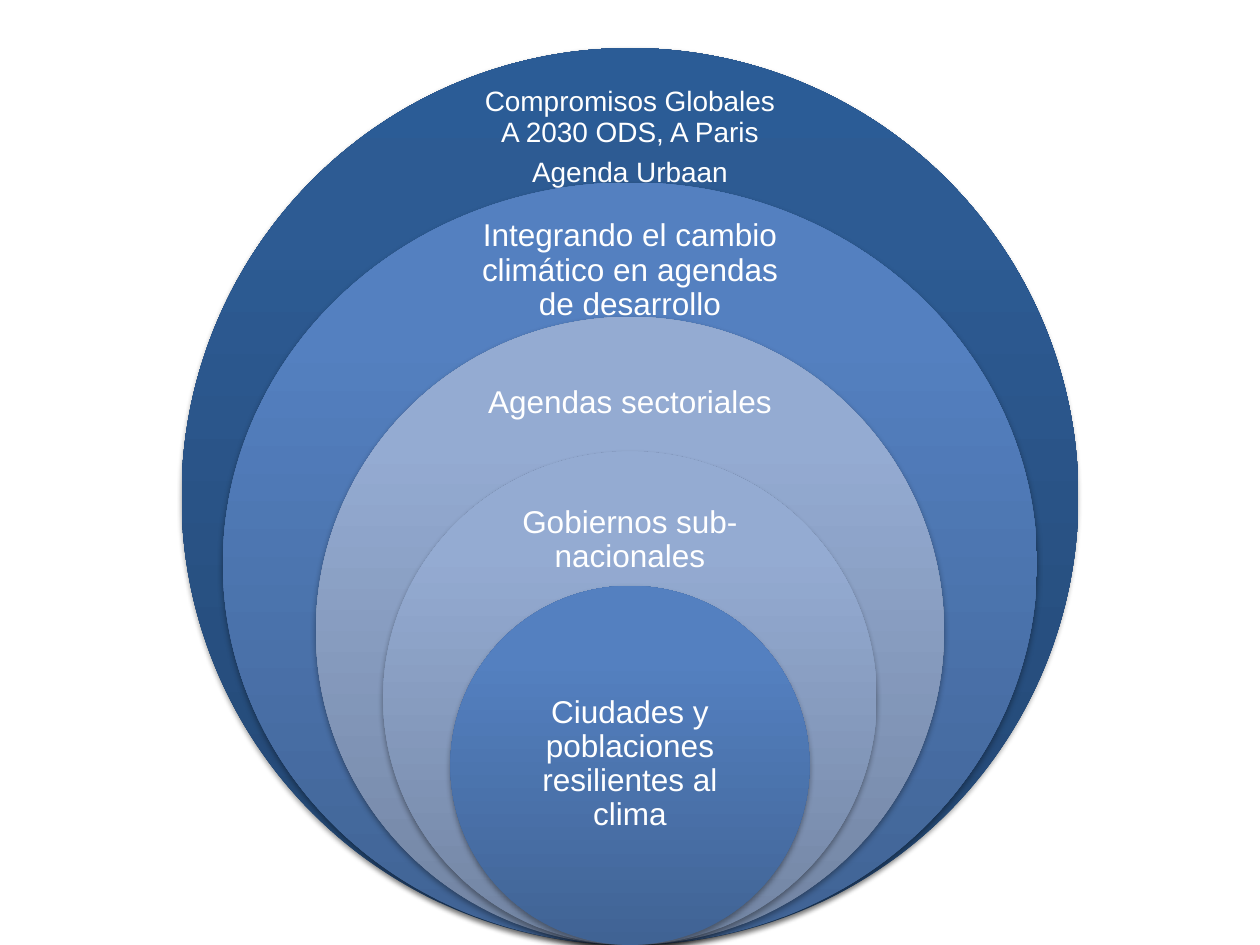
import lxml.etree
import pptx
import pptx.dml.color
import pptx.enum.shapes
import pptx.enum.text
import pptx.oxml.ns
import pptx.util

Cm = pptx.util.Cm
Pt = pptx.util.Pt
RGBColor = pptx.dml.color.RGBColor
qn = pptx.oxml.ns.qn

WHITE = RGBColor(0xFF, 0xFF, 0xFF)
BLACK = RGBColor(0x00, 0x00, 0x00)
NAVY = (RGBColor(0x23, 0x46, 0x71), RGBColor(0x2D, 0x5B, 0x93), RGBColor(0x2B, 0x5C, 0x96))
BLUE = (RGBColor(0x40, 0x63, 0x94), RGBColor(0x54, 0x80, 0xC0), RGBColor(0x52, 0x81, 0xC3))
PALE = (RGBColor(0x72, 0x84, 0xA2), RGBColor(0x94, 0xAB, 0xD2), RGBColor(0x94, 0xAC, 0xD4))

PAGE_WIDTH, PAGE_HEIGHT = 25.4, 19.05
OUTER_HEIGHT, RING_STEP = 18.08, 2.71
SECOND_RING_WIDTH = 16.41


class Diagram:
    font = "Arial"
    stops = (0, 80, 100)

    def __init__(self, page):
        self.page = page

    def add_ring(self, width, height, colours):
        ring = self.page.shapes.add_shape(
            pptx.enum.shapes.MSO_SHAPE.OVAL,
            Cm((PAGE_WIDTH - width) / 2), Cm(PAGE_HEIGHT - height), Cm(width), Cm(height))
        ring.line.fill.background()
        ring.fill.gradient()
        ring.fill.gradient_angle = 90
        stop_list = ring._element.spPr.find(qn("a:gradFill")).find(qn("a:gsLst"))
        for stop in list(stop_list):
            stop_list.remove(stop)
        for position, colour in zip(self.stops, colours):
            stop = lxml.etree.SubElement(stop_list, qn("a:gs"), pos=str(position * 1000))
            lxml.etree.SubElement(stop, qn("a:srgbClr"), val=str(colour))
        self.add_shadow(ring)

    def add_shadow(self, shape):
        shape.shadow.inherit = False
        effects = shape._element.spPr.find(qn("a:effectLst"))
        shadow = lxml.etree.SubElement(
            effects, qn("a:outerShdw"), blurRad=str(Pt(3.1)), dist=str(Pt(1.8)),
            dir="5400000", rotWithShape="0")
        colour = lxml.etree.SubElement(shadow, qn("a:srgbClr"), val=str(BLACK))
        lxml.etree.SubElement(colour, qn("a:alpha"), val="35000")

    def add_label(self, text, top, width, height, size, inset):
        box = self.page.shapes.add_textbox(
            Cm((PAGE_WIDTH - width) / 2), Cm(top), Cm(width), Cm(height))
        frame = box.text_frame
        frame.word_wrap = True
        frame.vertical_anchor = pptx.enum.text.MSO_ANCHOR.MIDDLE
        frame.margin_left = frame.margin_right = Cm(inset)
        frame.margin_top = frame.margin_bottom = Cm(inset)
        frame.text = text
        for para in frame.paragraphs:
            para.alignment = pptx.enum.text.PP_ALIGN.CENTER
            para.line_spacing = 0.9
            para.space_after = Pt(size * 0.35)
            for span in para.runs:
                span.font.name = self.font
                span.font.size = Pt(size)
                span.font.color.rgb = WHITE


def main():
    deck = pptx.Presentation()
    deck.slide_width, deck.slide_height = Cm(PAGE_WIDTH), Cm(PAGE_HEIGHT)
    diagram = Diagram(deck.slides.add_slide(deck.slide_layouts[6]))
    levels = [
        (NAVY, "Compromisos Globales A 2030 ODS, A Paris\nAgenda Urbaan", 1.88, 6.78, 1.8, 16, 0.3),
        (BLUE, "Integrando el cambio climático en agendas de desarrollo", 4.57, 7.06, 1.78, 18, 0.36),
        (PALE, "Agendas sectoriales", 7.26, 6.55, 1.75, 18, 0.36),
        (PALE, "Gobiernos sub-nacionales", 10.01, 5.36, 1.78, 18, 0.36),
        (BLUE, "Ciudades y poblaciones resilientes al clima", 13.61, 5.11, 3.61, 18, 0.36),
    ]
    for index, (colours, *label) in enumerate(levels):
        height = OUTER_HEIGHT - index * RING_STEP
        width = SECOND_RING_WIDTH if index == 1 else height
        diagram.add_ring(width, height, colours)
        diagram.add_label(*label)
    deck.save("out.pptx")


if __name__ == "__main__":
    main()
